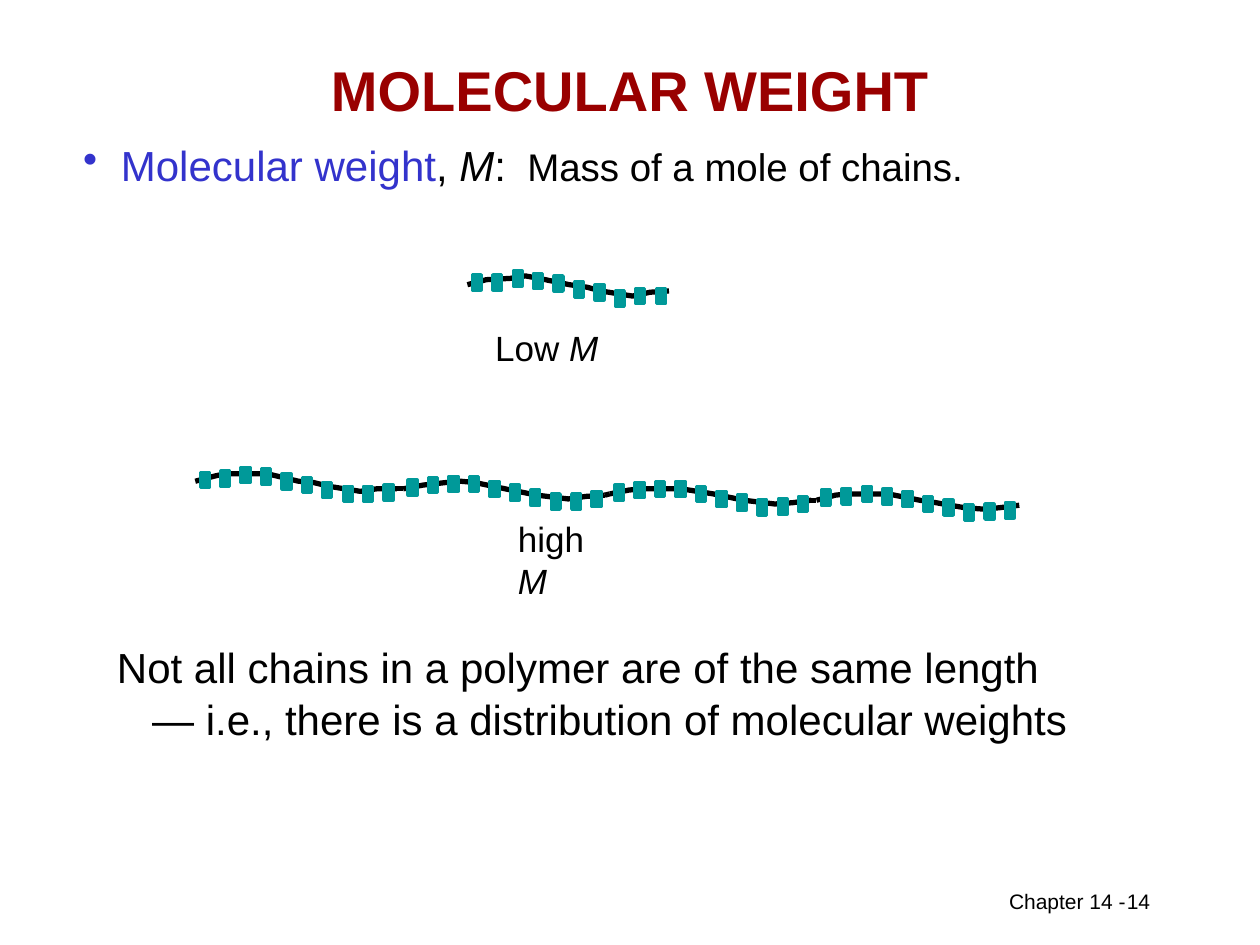
from pptx import Presentation
from pptx.dml.color import RGBColor
from pptx.enum.shapes import MSO_CONNECTOR, MSO_SHAPE
from pptx.enum.text import MSO_ANCHOR, PP_ALIGN
from pptx.oxml.ns import qn
from pptx.util import Inches, Pt
from lxml import etree

COLORS = {"text": "000000", "title": "990000", "term": "3333CC", "unit": "009999"}

UNIT_SIZE = (0.07, 0.12)
UNIT_OFFSET = 0.04
UNIT_SPAN = 1.46

LOW_CHAIN = [
    ([(3.71, 2.26), (3.86, 2.22), (4.05, 2.21), (4.17, 2.19), (4.28, 2.21), (4.52, 2.26),
      (4.66, 2.28), (4.77, 2.31), (5.02, 2.35), (5.16, 2.32), (5.31, 2.31)],
     [2.18, 2.18, 2.15, 2.17, 2.19, 2.24, 2.26, 2.31, 2.29, 2.29]),
]
HIGH_CHAIN = [
    ([(1.55, 3.82), (1.7, 3.78), (1.79, 3.76), (1.9, 3.76), (2.12, 3.76), (2.37, 3.82),
      (2.49, 3.83), (2.61, 3.86), (2.86, 3.9), (2.99, 3.88), (3.15, 3.88)],
     [3.75, 3.74, 3.71, 3.72, 3.76, 3.79, 3.83, 3.86, 3.86, 3.85]),
    ([(3.2, 3.88), (3.36, 3.85), (3.54, 3.83), (3.66, 3.82), (3.77, 3.83), (4.01, 3.88),
      (4.26, 3.93), (4.51, 3.96), (4.65, 3.94), (4.8, 3.93)],
     [3.81, 3.79, 3.78, 3.78, 3.82, 3.85, 3.89, 3.92, 3.92, 3.9]),
    ([(4.84, 3.92), (4.99, 3.89), (5.08, 3.88), (5.19, 3.88), (5.41, 3.88), (5.66, 3.92),
      (5.9, 3.97), (6.15, 4), (6.29, 3.99), (6.44, 3.97)],
     [3.85, 3.83, 3.82, 3.82, 3.86, 3.9, 3.93, 3.97, 3.96, 3.94]),
    ([(6.48, 3.97), (6.63, 3.93), (6.72, 3.92), (6.83, 3.92), (7.05, 3.92), (7.3, 3.97),
      (7.43, 3.99), (7.54, 4.01), (7.66, 4.03), (7.8, 4.04), (7.93, 4.03), (8.09, 4.01)],
     [3.89, 3.88, 3.86, 3.88, 3.9, 3.94, 3.97, 4.01, 4, 3.99]),
]


def color(name):
    return RGBColor.from_string(COLORS[name])


def set_line(line, name, width):
    line.color.rgb = color(name)
    line.width = Pt(width)


def add_text(shapes, at, paragraphs, size=24, tint="text", bold=False, align=PP_ALIGN.LEFT,
             anchor=MSO_ANCHOR.TOP, inset=True, wrap=True):
    box = shapes.add_textbox(*map(Inches, at))
    frame = box.text_frame
    frame.word_wrap = wrap
    frame.vertical_anchor = anchor
    if not inset:
        frame.margin_left = frame.margin_top = frame.margin_right = frame.margin_bottom = 0
    for index, spans in enumerate(paragraphs):
        para = frame.paragraphs[0] if index == 0 else frame.add_paragraph()
        para.alignment = align
        for text, style in spans:
            span = para.add_run()
            span.text = text
            span.font.name = "Arial"
            span.font.size = Pt(style.get("size", size))
            span.font.bold = bold
            span.font.italic = style.get("italic", False)
            span.font.color.rgb = color(style.get("tint", tint))
    return frame.paragraphs


def indent(para, left, bullet=None):
    properties = para._p.get_or_add_pPr()
    properties.set("marL", str(Inches(left)))
    properties.set("indent", str(-Inches(left) if bullet else 0))
    if bullet:
        etree.SubElement(properties, qn("a:buChar")).set("char", bullet)


def add_backbone(shapes, points):
    start, *rest = [(Inches(x), Inches(y)) for x, y in points]
    builder = shapes.build_freeform(*start, scale=1.0)
    builder.add_line_segments(rest, close=False)
    curve = builder.convert_to_shape()
    curve.shadow.inherit = False
    curve.fill.background()
    set_line(curve.line, "text", 3)


def add_unit(shapes, left, top):
    unit = shapes.add_shape(MSO_SHAPE.RECTANGLE, *map(Inches, (left, top, *UNIT_SIZE)))
    unit.shadow.inherit = False
    unit.fill.solid()
    unit.fill.fore_color.rgb = color("unit")
    set_line(unit.line, "unit", 2)


def add_link(shapes, start, end):
    link = shapes.add_connector(MSO_CONNECTOR.STRAIGHT, *map(Inches, (*start, *end)))
    set_line(link.line, "text", 3)
    etree.SubElement(link._element.spPr, qn("a:effectLst"))


def add_chain(page, segments):
    group = page.shapes.add_group_shape()
    for points, tops in segments:
        add_backbone(group.shapes, points)
        pitch = UNIT_SPAN / (len(tops) - 1)
        for index, top in enumerate(tops):
            add_unit(group.shapes, points[0][0] + UNIT_OFFSET + index * pitch, top)
    for (before, _), (after, _) in zip(segments, segments[1:]):
        add_link(group.shapes, before[-1], after[0])
    return group


def main():
    deck = Presentation()
    deck.slide_width, deck.slide_height = Inches(10), Inches(7.5)
    page = deck.slides.add_slide(deck.slide_layouts[6])
    symbol = ("M", {"italic": True})

    add_text(page.shapes, (7.91, 7, 1.18, 0.3), [[("Chapter 14 -", {})]], size=12, wrap=False)
    add_text(page.shapes, (8.39, 7, 1.29, 0.39), [[("14", {})]], size=12,
             align=PP_ALIGN.CENTER)
    add_text(page.shapes, (0.75, 0.42, 8.5, 0.58), [[("MOLECULAR WEIGHT", {})]], size=32,
             tint="title", bold=True, align=PP_ALIGN.CENTER, anchor=MSO_ANCHOR.MIDDLE)
    definition, = add_text(
        page.shapes, (0.66, 1.11, 7.2, 0.4),
        [[("Molecular weight", {"tint": "term"}), (", ", {}), symbol, (":", {}),
          ("  Mass of a mole of chains.", {"size": 22})]], inset=False)
    indent(definition, 0.3, bullet="•")

    low = add_chain(page, LOW_CHAIN)
    add_text(low.shapes, (3.93, 2.59, 1.27, 0.33), [[("Low ", {}), symbol]], size=20,
             inset=False)
    add_text(page.shapes, (4.11, 4.11, 0.75, 0.66), [[("high ", {}), symbol]], size=20,
             inset=False)
    _, detail = add_text(
        page.shapes, (0.83, 5.05, 8.24, 0.9),
        [[("Not all chains in a polymer are of the same length", {})],
         [("— i.e., there is a distribution of molecular weights", {})]],
        anchor=MSO_ANCHOR.MIDDLE)
    indent(detail, 0.28)
    detail.space_before = Pt(1)
    add_chain(page, HIGH_CHAIN)

    deck.save("out.pptx")


if __name__ == "__main__":
    main()
